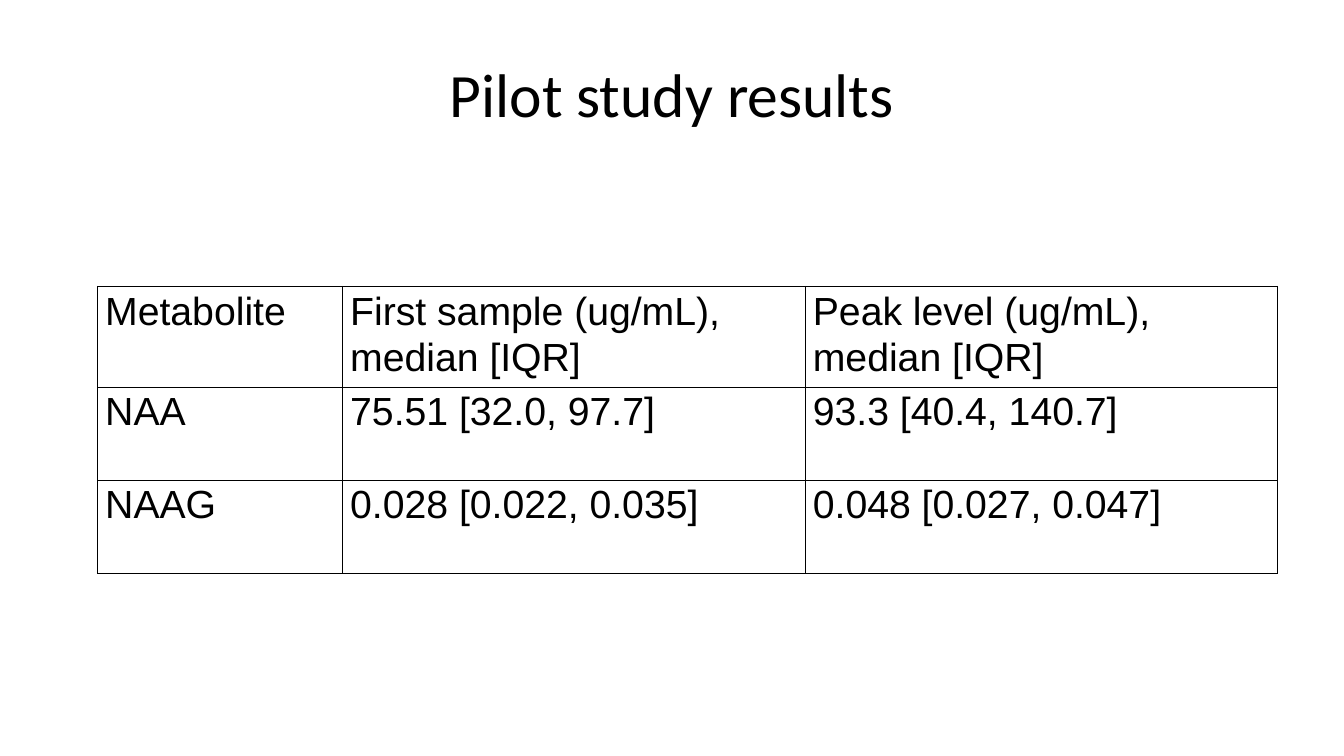
from lxml import etree
from pptx import Presentation
from pptx import util as u
from pptx.dml.color import RGBColor
from pptx.enum import text
from pptx.oxml import ns

COLORS = {"ink": "000000", "border": "000000"}

RESULTS = [
    ["Metabolite", "First sample (ug/mL), median [IQR]", "Peak level (ug/mL), median [IQR]"],
    ["NAA", "75.51 [32.0, 97.7]", "93.3 [40.4, 140.7]"],
    ["NAAG", "0.028 [0.022, 0.035]", "0.048 [0.027, 0.047]"],
]


class SlideBuilder:
    """Holds the text style and the current slide."""

    title_font, title_size = "Calibri", 44
    table_font, table_size = "Arial", 28
    line_spacing = 1.07
    cell_margin = 5.4
    border_width = 1

    def __init__(self, presentation):
        self.slide = presentation.slides.add_slide(presentation.slide_layouts[6])

    def format_runs(self, paragraph, font, size):
        for run in paragraph.runs:
            run.font.name = font
            run.font.size = u.Pt(size)
            run.font.color.rgb = RGBColor.from_string(COLORS["ink"])

    def title(self, wording, left, top, width, height):
        shape = self.slide.shapes.add_textbox(*map(u.Pt, (left, top, width, height)))
        text_frame = shape.text_frame
        text_frame.word_wrap = True
        text_frame.vertical_anchor = text.MSO_ANCHOR.MIDDLE
        text_frame.text = wording
        paragraph = text_frame.paragraphs[0]
        paragraph.alignment = text.PP_ALIGN.CENTER
        self.format_runs(paragraph, self.title_font, self.title_size)

    def table(self, rows, left, top, column_widths, row_height):
        shape = self.slide.shapes.add_table(
            len(rows), len(column_widths), u.Pt(left), u.Pt(top),
            u.Pt(sum(column_widths)), u.Pt(row_height * len(rows)))
        table = shape.table
        table.first_row = table.horz_banding = False
        for column, width in zip(table.columns, column_widths):
            column.width = u.Pt(width)
        for row, wordings in zip(table.rows, rows):
            row.height = u.Pt(row_height)
            for cell, wording in zip(row.cells, wordings):
                self.cell(cell, wording)

    def cell(self, cell, wording):
        cell.margin_left = cell.margin_right = u.Pt(self.cell_margin)
        cell.margin_top = cell.margin_bottom = u.Pt(0)
        cell.text_frame.text = wording
        paragraph = cell.text_frame.paragraphs[0]
        paragraph.line_spacing = self.line_spacing
        self.format_runs(paragraph, self.table_font, self.table_size)
        # Borders come before the fill in the cell properties
        properties = cell._tc.get_or_add_tcPr()
        for side in ("a:lnL", "a:lnR", "a:lnT", "a:lnB"):
            line = etree.SubElement(properties, ns.qn(side), w=str(u.Pt(self.border_width)))
            fill = etree.SubElement(line, ns.qn("a:solidFill"))
            etree.SubElement(fill, ns.qn("a:srgbClr"), val=COLORS["border"])
        cell.fill.background()


def main():
    presentation = Presentation()
    presentation.slide_width = u.Pt(960)
    presentation.slide_height = u.Pt(540)
    builder = SlideBuilder(presentation)

    # Heading
    builder.title("Pilot study results", 48, 21.6, 864, 90)

    # Results table
    builder.table(RESULTS, 69.8, 204.7, column_widths=[175, 330.5, 337], row_height=66.5)

    presentation.save("out.pptx")


if __name__ == "__main__":
    main()
